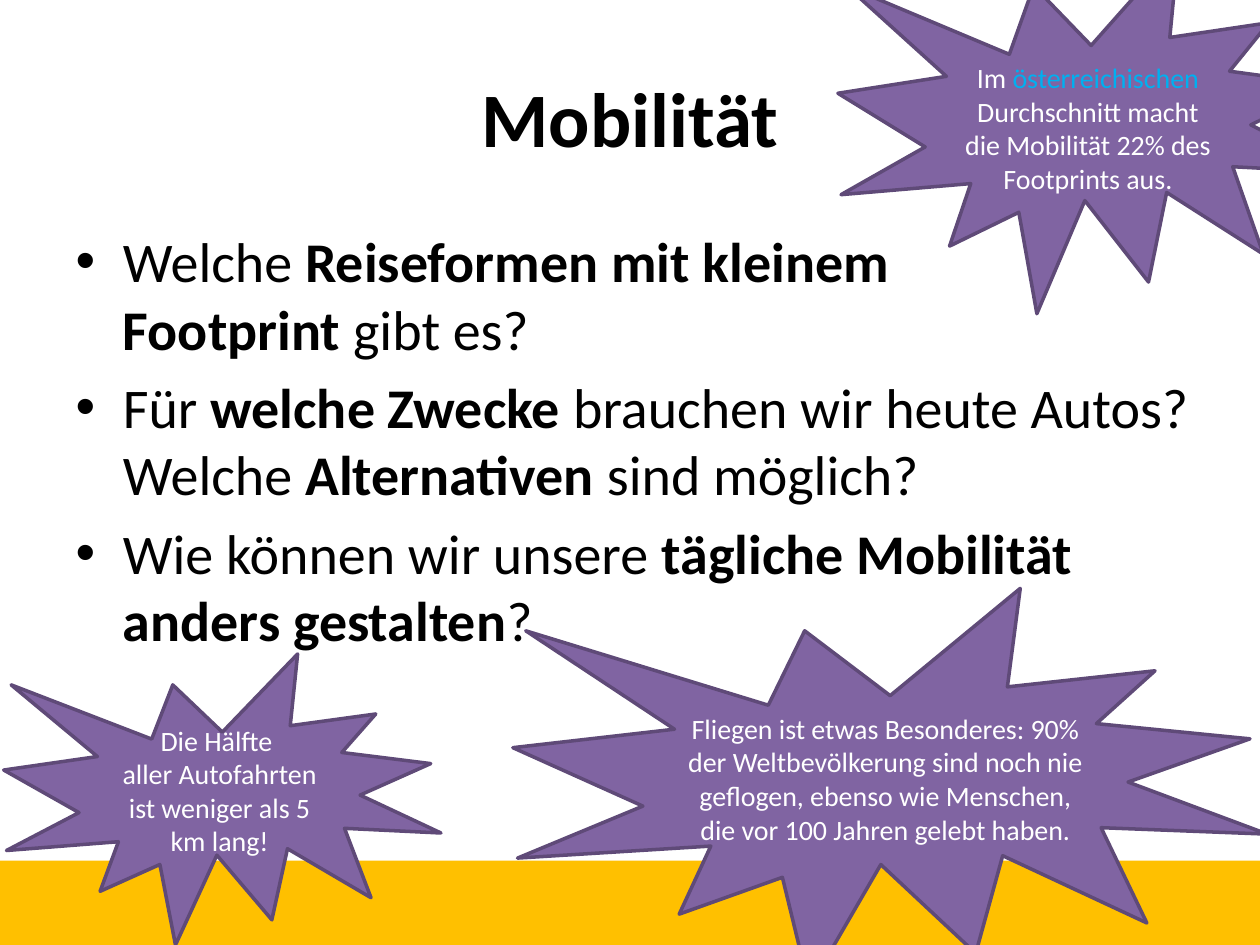
from pptx import Presentation
from pptx.dml.color import RGBColor
from pptx.enum.shapes import MSO_SHAPE
from pptx.enum.text import MSO_ANCHOR, PP_ALIGN
from pptx.util import Inches, Pt

RECT, BURST = MSO_SHAPE.RECTANGLE, MSO_SHAPE.EXPLOSION1
TOP, MIDDLE = MSO_ANCHOR.TOP, MSO_ANCHOR.MIDDLE
CENTER = PP_ALIGN.CENTER


def color(code):
    return RGBColor.from_string(code)


class Deck:
    face, ink, white = "Calibri", "000000", "FFFFFF"
    gold, violet, edge, accent = "FFC000", "8064A2", "5F4A78", "00B0F0"

    def __init__(self, slide):
        self.slide = slide

    def style(self, run, size, code, bold=False):
        font = run.font
        font.name, font.size, font.bold = self.face, Pt(size), bold
        font.color.rgb = color(code)

    def place(self, shape, box):
        shape.left, shape.top, shape.width, shape.height = map(Inches, box)

    def shape(self, kind, box, fill):
        shape = self.slide.shapes.add_shape(kind, *map(Inches, box))
        shape.shadow.inherit = False
        shape.fill.solid()
        shape.fill.fore_color.rgb = color(fill)
        shape.line.fill.background()
        return shape

    def title(self, box, text):
        title = self.slide.shapes.title
        self.place(title, box)
        title.text_frame.text = text
        para = title.text_frame.paragraphs[0]
        para.alignment = CENTER
        self.style(para.runs[0], 44, self.ink, True)

    def list(self, box, items):
        """Fill the body; text between asterisks is bold."""
        body = self.slide.placeholders[1]
        self.place(body, box)
        frame = body.text_frame
        for i, item in enumerate(items):
            para = frame.add_paragraph() if i else frame.paragraphs[0]
            para.space_before = Pt(6.4 if i else 0)
            for j, part in enumerate(item.split("*")):
                for k, line in enumerate(part.split("\n")):
                    if k:
                        para.add_line_break()
                    run = para.add_run()
                    run.text = line
                    self.style(run, 32, self.ink, j % 2 == 1)

    def burst(self, box, text, anchor=TOP):
        """Draw a star; text between asterisks takes the accent colour."""
        star = self.shape(BURST, box, self.violet)
        star.line.color.rgb = color(self.edge)
        star.line.width = Pt(2)
        frame = star.text_frame
        frame.word_wrap = True
        frame.vertical_anchor = anchor
        for i, line in enumerate(text.split("\n")):
            para = frame.add_paragraph() if i else frame.paragraphs[0]
            para.alignment = CENTER
            for j, part in enumerate(line.split("*")):
                run = para.add_run()
                run.text = part
                self.style(run, 16, self.accent if j % 2 else self.white)


def main():
    prs = Presentation()
    prs.slide_width, prs.slide_height = Inches(10), Inches(7.5)
    deck = Deck(prs.slides.add_slide(prs.slide_layouts[1]))

    # Footer band
    deck.shape(RECT, (0, 6.83, 10, 0.67), deck.gold)

    # Title and questions
    deck.title((0.5, 0.3, 9, 1.25), "Mobilität")
    deck.list((0.5, 1.75, 9.07, 4.95), [
        "Welche *Reiseformen mit kleinem \nFootprint *gibt es?",
        "Für *welche Zwecke *brauchen wir heute Autos? "
        "Welche *Alternativen* sind möglich?",
        "Wie können wir unsere *tägliche Mobilität anders gestalten*?",
    ])

    # Facts in stars
    deck.burst((4.07, 4.67, 5.99, 3.17),
               "Fliegen ist etwas Besonderes: 90% der Weltbevölkerung sind "
               "noch nie geflogen, ebenso wie Menschen, die vor 100 Jahren "
               "gelebt haben.")
    deck.burst((6.65, -0.42, 4.02, 2.91),
               "Im *österreichischen* Durchschnitt macht die Mobilität 22% "
               "des Footprints aus.")
    deck.burst((0.03, 5.19, 3.47, 2.31),
               "Die Hälfte \naller Autofahrten ist weniger als 5 km lang!",
               MIDDLE)

    prs.save("out.pptx")


if __name__ == "__main__":
    main()
